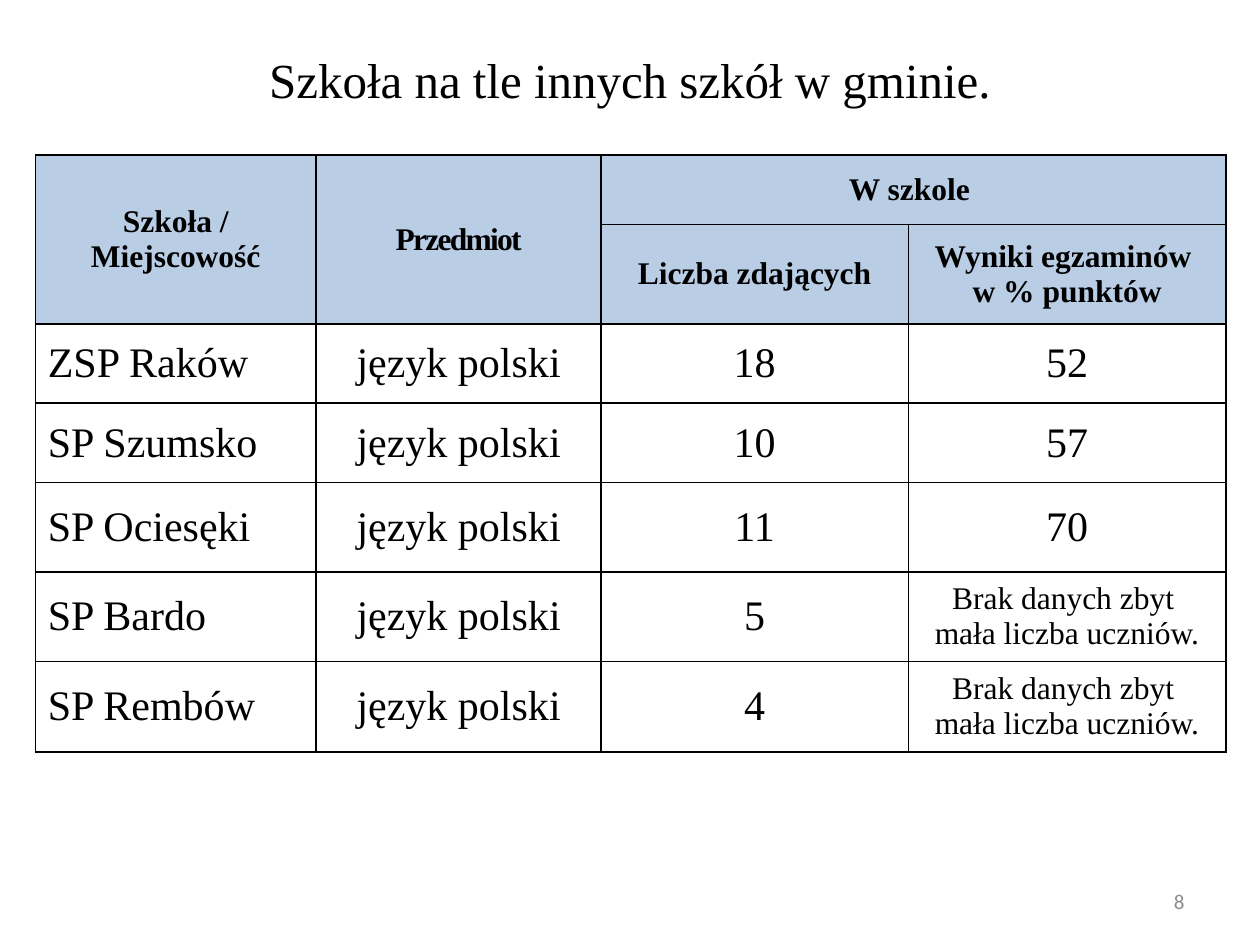
from dataclasses import dataclass

from lxml.etree import SubElement
from pptx import Presentation
from pptx.dml.color import RGBColor
from pptx.enum.text import MSO_ANCHOR, MSO_AUTO_SIZE, PP_ALIGN
from pptx.oxml.ns import qn
from pptx.util import Inches, Pt


@dataclass(frozen=True)
class Theme:
    font: str = "Times New Roman"
    number_font: str = "Calibri"
    ink: str = "000000"
    header_fill: str = "B9CDE5"
    number_ink: str = "8C8C8C"
    title_size: int = 28
    body_size: int = 24
    small_size: int = 18
    number_size: int = 12
    border_width: int = 1


THEME = Theme()
COLUMN_WIDTHS = [2.23, 2.26, 2.44, 2.52]
ROW_HEIGHTS = [0.55, 0.79, 0.63, 0.63, 0.71, 0.71, 0.72]
NO_DATA = "Brak danych zbyt \nmała liczba uczniów."
SUBJECT = "język polski"
# School, number of pupils, exam result
RESULTS = [
    ("ZSP Raków", "18", "52"),
    ("SP Szumsko", "10", "57"),
    ("SP Ociesęki", "11", "70"),
    ("SP Bardo", "5", NO_DATA),
    ("SP Rembów", "4", NO_DATA),
]
# Row, column, last row, last column, text, letter spacing in points
HEADERS = [
    (0, 0, 1, 0, "Szkoła / Miejscowość", 0),
    (0, 1, 1, 1, "Przedmiot", -1),
    (0, 2, 0, 3, "W szkole ", 0),
    (1, 2, 1, 2, "Liczba zdających", 0),
    (1, 3, 1, 3, "Wyniki egzaminów \nw % punktów", 0),
]


def write_text(frame, text, *, size, font=THEME.font, color=THEME.ink, bold=False,
               align=PP_ALIGN.CENTER, spacing=0):
    """Write one paragraph per line of text."""
    for index, line in enumerate(text.split("\n")):
        para = frame.paragraphs[0] if index == 0 else frame.add_paragraph()
        para.alignment = align
        span = para.add_run()
        span.text = line
        span.font.name = font
        span.font.size = Pt(size)
        span.font.bold = bold
        span.font.color.rgb = RGBColor.from_string(color)
        if spacing:
            span.font._element.set("spc", str(spacing * 100))


def add_borders(cell):
    properties = cell._tc.get_or_add_tcPr()
    for index, side in enumerate(("a:lnL", "a:lnR", "a:lnT", "a:lnB")):
        line = properties.makeelement(qn(side), {"w": str(Pt(THEME.border_width))})
        SubElement(SubElement(line, qn("a:solidFill")), qn("a:srgbClr"), val=THEME.ink)
        properties.insert(index, line)


def add_title(page, text):
    title = page.shapes.title
    title.left, title.top = Inches(0), Inches(0)
    title.width, title.height = Inches(10), Inches(1.07)
    frame = title.text_frame
    frame.auto_size = MSO_AUTO_SIZE.NONE
    frame.word_wrap = True
    frame.vertical_anchor = MSO_ANCHOR.TOP
    frame.margin_left = frame.margin_right = Inches(0.59)
    frame.margin_top, frame.margin_bottom = Inches(0.39), Inches(0.2)
    write_text(frame, text, size=THEME.title_size)


def add_results_table(page):
    table = page.shapes.add_table(
        len(ROW_HEIGHTS), len(COLUMN_WIDTHS), Inches(0.28), Inches(1.23),
        Inches(sum(COLUMN_WIDTHS)), Inches(sum(ROW_HEIGHTS))).table
    table.first_row = table.horz_banding = False
    for column, width in zip(table.columns, COLUMN_WIDTHS):
        column.width = Inches(width)
    for row, height in zip(table.rows, ROW_HEIGHTS):
        row.height = Inches(height)

    # Fills and borders
    for row_index, row in enumerate(table.rows):
        for cell in row.cells:
            cell.vertical_anchor = MSO_ANCHOR.MIDDLE
            if row_index < 2:
                cell.fill.solid()
                cell.fill.fore_color.rgb = RGBColor.from_string(THEME.header_fill)
            else:
                cell.fill.background()
            add_borders(cell)

    # Two-level header
    for top, left, bottom, right, text, spacing in HEADERS:
        cell = table.cell(top, left)
        if (top, left) != (bottom, right):
            cell.merge(table.cell(bottom, right))
        write_text(cell.text_frame, text, size=THEME.small_size, bold=True, spacing=spacing)

    # One row per school
    for row_index, (school, pupils, result) in enumerate(RESULTS, start=2):
        for column_index, text in enumerate((school, SUBJECT, pupils, result)):
            write_text(table.cell(row_index, column_index).text_frame, text,
                       size=THEME.small_size if text == NO_DATA else THEME.body_size,
                       align=PP_ALIGN.LEFT if column_index == 0 else PP_ALIGN.CENTER)


def add_page_number(page, number):
    box = page.shapes.add_textbox(Inches(7.17), Inches(6.95), Inches(2.33), Inches(0.4))
    frame = box.text_frame
    frame.word_wrap = True
    frame.vertical_anchor = MSO_ANCHOR.MIDDLE
    write_text(frame, number, size=THEME.number_size, font=THEME.number_font,
               color=THEME.number_ink, align=PP_ALIGN.RIGHT)


def main():
    deck = Presentation()
    deck.slide_width, deck.slide_height = Inches(10), Inches(7.5)
    page = deck.slides.add_slide(deck.slide_layouts[5])
    add_title(page, "Szkoła na tle innych szkół w gminie.")
    add_results_table(page)
    add_page_number(page, "8")
    deck.save("out.pptx")


if __name__ == "__main__":
    main()
